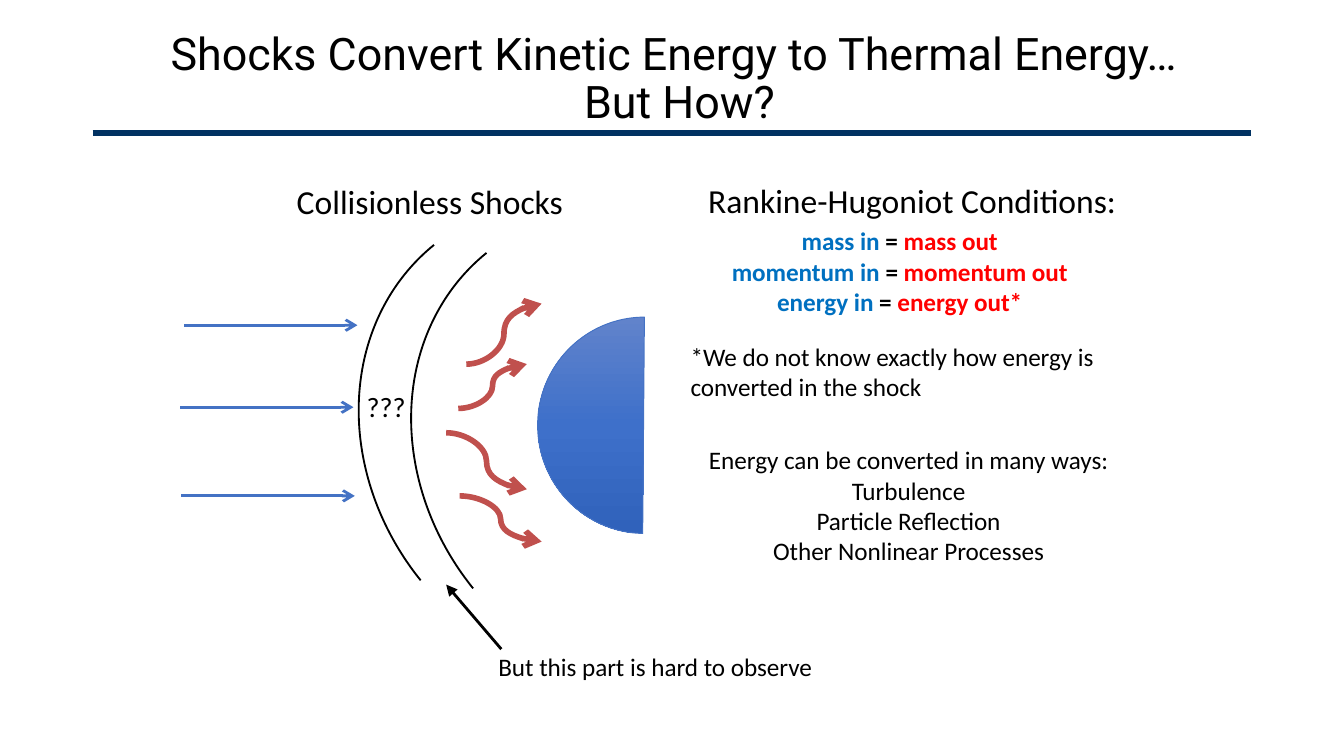
import copy

import pptx
import pptx.dml.color
import pptx.enum.shapes
import pptx.enum.text
import pptx.oxml
import pptx.oxml.ns
import pptx.util

RGB = pptx.dml.color.RGBColor
BLACK = RGB(0, 0, 0)
NAVY = RGB(0x01, 0x32, 0x62)
BLUE = RGB(0x44, 0x72, 0xC4)
BRICK = RGB(0xC0, 0x50, 0x4D)
INFLOW = RGB(0x00, 0x70, 0xC0)
OUTFLOW = RGB(0xFF, 0x00, 0x00)
PLANET = [(0, RGB(0x61, 0x83, 0xCB)), (0.5, RGB(0x3E, 0x70, 0xCA)),
          (1, RGB(0x30, 0x62, 0xBB))]

SHAPE = pptx.enum.shapes.MSO_SHAPE
LINK = pptx.enum.shapes.MSO_CONNECTOR
ALIGN = pptx.enum.text.PP_ALIGN
FIT = pptx.enum.text.MSO_AUTO_SIZE
SCALE = 9144  # EMU in one px, 100 px to the inch


def px(*sizes):
    return [pptx.util.Emu(size * SCALE) for size in sizes]


def style(font, size, color, name="Calibri", bold=False):
    font.name = name
    font.size = pptx.util.Pt(size)
    font.color.rgb = color
    font.bold = bold


def add_text(slide, box, lines, size=13.5, align=ALIGN.LEFT, wrap=False, bold=False):
    """Each line is a list of (words, colour) runs."""
    frame = slide.shapes.add_textbox(*px(*box)).text_frame
    frame.word_wrap = wrap
    frame.auto_size = FIT.SHAPE_TO_FIT_TEXT
    for i, line in enumerate(lines):
        para = frame.paragraphs[0] if i == 0 else frame.add_paragraph()
        para.alignment = align
        for words, color in line:
            run = para.add_run()
            run.text = words
            style(run.font, size, color, bold=bold)


def add_line(slide, start, end, color, width, kind=LINK.STRAIGHT, head=None):
    line = slide.shapes.add_connector(kind, *px(*start, *end))
    line.line.color.rgb = color
    line.line.width = pptx.util.Pt(width)
    if head:
        tip = pptx.oxml.parse_xml(
            f'<a:tailEnd {pptx.oxml.ns.nsdecls("a")} type="{head}"/>')
        line.line._get_or_add_ln().append(tip)
    line._element.spPr.append(
        pptx.oxml.parse_xml(f'<a:effectLst {pptx.oxml.ns.nsdecls("a")}/>'))


def add_header(slide, x, y):
    title = slide.shapes.title
    title.left, title.top, title.width, title.height = px(x + 18, y + 12, 975, 95)
    frame = title.text_frame
    frame.text = "Shocks Convert Kinetic Energy to Thermal Energy… \vBut How?"
    frame.auto_size = FIT.NONE
    frame.word_wrap = True
    frame.vertical_anchor = pptx.enum.text.MSO_ANCHOR.MIDDLE
    para = frame.paragraphs[0]
    para.alignment = ALIGN.CENTER
    para.line_spacing = 0.9
    for run in para.runs:
        style(run.font, 24, BLACK, "Roboto")
    add_line(slide, (x + 69, y + 99), (x + 931, y + 99), NAVY, 3)


def add_planet(slide, x, y):
    planet = slide.shapes.add_shape(SHAPE.CHORD, *px(x, y, 159, 161))
    planet.shadow.inherit = False
    planet.adjustments[0] = 54.56
    planet.adjustments[1] = 162
    planet.line.color.rgb = BLUE
    planet.line.width = pptx.util.Pt(0.5)
    fill = planet.fill
    fill.gradient()
    fill.gradient_angle = 270
    stops = planet._element.spPr.find(".//" + pptx.oxml.ns.qn("a:gsLst"))
    stops.append(copy.deepcopy(stops[-1]))
    for stop, (place, color) in zip(fill.gradient_stops, PLANET):
        stop.position = place
        stop.color.rgb = color


def add_arc(slide, x, y):
    arc = slide.shapes.add_shape(SHAPE.ARC, *px(x, y, 376, 329))
    arc.shadow.inherit = False
    arc.rotation = 231.1
    arc.fill.background()
    arc.line.color.rgb = BLACK
    arc.line.width = pptx.util.Pt(1)


def add_shock(slide, x, y):
    """Flow arrows, the two shock fronts and the planet behind them."""
    add_planet(slide, x + 266, y + 106)
    for dx, dy in [(119, 34), (158, 40)]:
        add_arc(slide, x + dx, y + dy)
    for dx, dy in [(3, 112), (0, 173), (1, 239)]:
        add_line(slide, (x + dx, y + dy), (x + dx + 129, y + dy),
                 BLUE, 1.5, head="arrow")
    for x1, y1, x2, y2 in [(208, 239, 269, 273), (213, 141, 269, 96),
                           (198, 192, 258, 234), (207, 174, 258, 141)]:
        add_line(slide, (x + x1, y + y1), (x + x2, y + y2),
                 BRICK, 3, LINK.CURVE, "arrow")
    add_text(slide, (x + 77, y, 220, 40), [[("Collisionless Shocks", BLACK)]], 18)
    add_text(slide, (x + 129, y + 155, 50, 35), [[("???", BLACK)]], 15)
    add_text(slide, (x + 227, y + 350, 288, 33),
             [[("But this part is hard to observe", BLACK)]], wrap=True)
    add_line(slide, (x + 239, y + 353), (x + 198, y + 305), BLACK, 1.5, head="triangle")


def add_notes(slide, x, y):
    """The conservation laws and the ways energy is converted."""
    add_text(slide, (x + 13, y, 328, 40),
             [[("Rankine-Hugoniot Conditions:", BLACK)]], 18)
    laws = [[(f"{item} in", INFLOW), (" = ", BLACK), (f"{item} out{mark}", OUTFLOW)]
            for item, mark in [("mass", ""), ("momentum", ""), ("energy", "*")]]
    add_text(slide, (x + 29, y + 34, 273, 78), laws, align=ALIGN.CENTER, bold=True)
    add_text(slide, (x, y + 120, 373, 56),
             [[("*We do not know exactly how energy is converted in the shock",
                BLACK)]], wrap=True)
    ways = ["Energy can be converted in many ways:", "Turbulence",
            "Particle Reflection", "Other Nonlinear Processes"]
    add_text(slide, (x + 11, y + 197, 322, 101),
             [[(way, BLACK)] for way in ways], align=ALIGN.CENTER)


def main():
    deck = pptx.Presentation()
    deck.slide_width, = px(1000)
    deck.slide_height = deck.slide_width * 9 // 16
    slide = deck.slides.add_slide(deck.slide_layouts.get_by_name("Title Only"))
    add_header(slide, 0, 0)
    add_shock(slide, 134, 130)
    add_notes(slide, 504, 129)
    deck.save("out.pptx")


if __name__ == "__main__":
    main()
